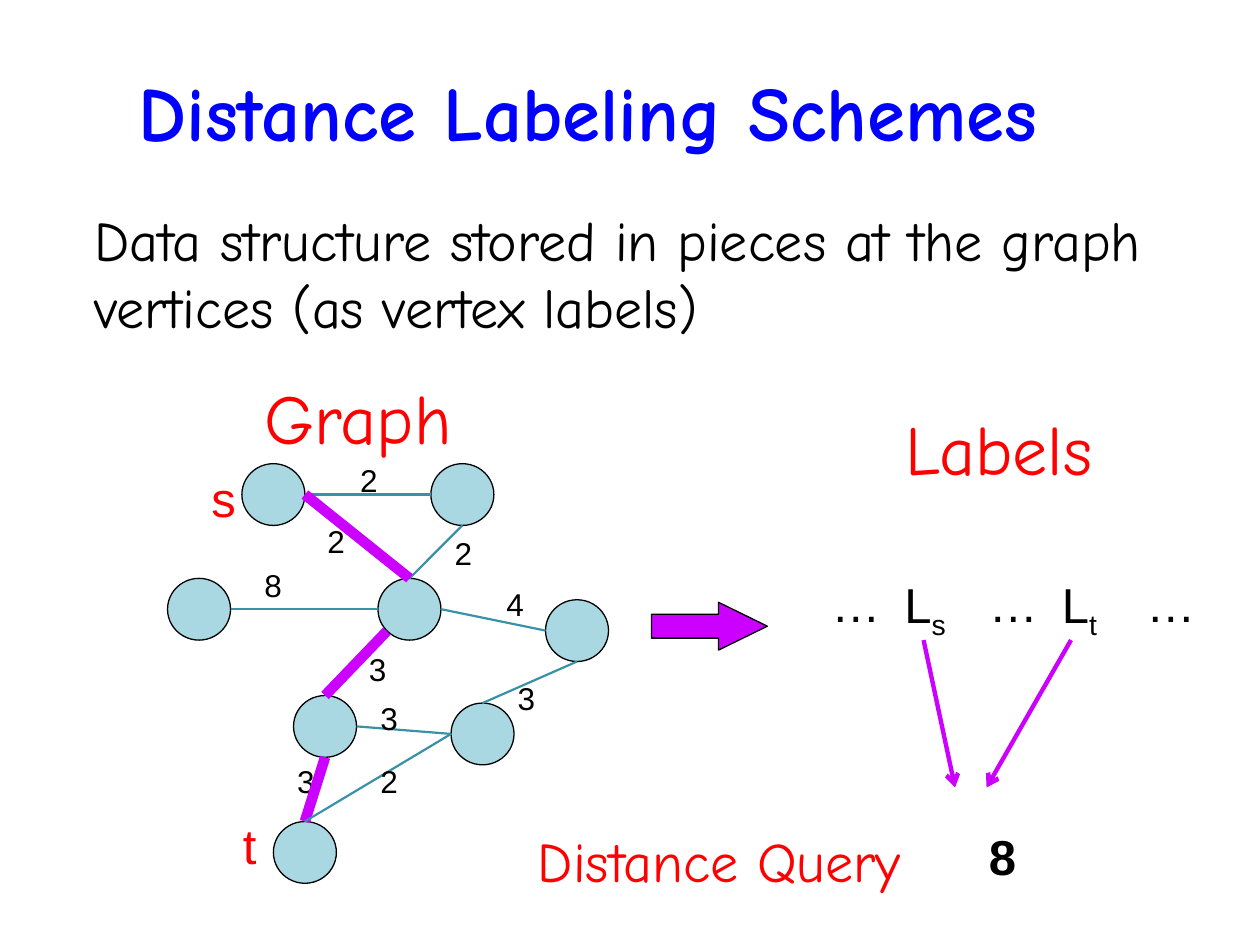
"""Build a slide on distance labeling schemes with a weighted graph."""
from lxml import etree
from pptx import Presentation
from pptx import util as u
from pptx.dml.color import RGBColor
from pptx.enum import shapes, text
from pptx.oxml.ns import qn

BLACK = RGBColor(0x00, 0x00, 0x00)
BLUE = RGBColor(0x00, 0x00, 0xFF)
RED = RGBColor(0xFF, 0x00, 0x00)
PALE = RGBColor(0xA9, 0xD7, 0xE2)
TEAL = RGBColor(0x38, 0x91, 0xA7)
PURPLE = RGBColor(0xCC, 0x00, 0xFF)
COMIC, ARIAL = "Comic Neue", "Arial"

WIDE, HIGH = 0.5, 0.49
NODES = {
    "left": (1.33, 4.59), "hub": (3, 4.59), "low": (2.33, 5.52),
    "mid": (3.58, 5.58), "top": (3.42, 3.68), "right": (4.33, 4.76),
    "s": (1.92, 3.68), "t": (2.17, 6.52),
}
SITES = {
    "N": (WIDE / 2, 0), "S": (WIDE / 2, HIGH), "W": (0, HIGH / 2),
    "E": (WIDE, HIGH / 2), "SW": (0.07, 0.42),
}
PATH = [("s", "E", "hub", "N"), ("hub", "SW", "low", "N"), ("low", "S", "t", "N")]
EDGES = PATH + [
    ("low", "E", "mid", "W"), ("mid", "N", "right", "S"),
    ("right", "W", "hub", "E"), ("hub", "W", "left", "E"),
    ("hub", "N", "top", "S"), ("top", "W", "s", "E"),
]
LAST = ("mid", "W", "t", "N")
COSTS = [
    ("2", 2.76, 3.61), ("2", 2.5, 4.09), ("2", 3.51, 4.19), ("3", 2.26, 6),
    ("3", 2.83, 5.11), ("4", 3.92, 4.59), ("3", 4.01, 5.34), ("8", 2, 4.44),
]
LATE = [("2", 2.92, 6), ("3", 2.92, 5.5)]


class Deck:
    """Holds the style and the current slide."""

    def __init__(self):
        self.prs = Presentation()
        self.prs.slide_width, self.prs.slide_height = u.Inches(10), u.Inches(7.5)
        self.slide = self.prs.slides.add_slide(self.prs.slide_layouts[6])

    def text(self, words, box, size, font=ARIAL, color=BLACK, bold=False, sub="", indent=0):
        frame = self.slide.shapes.add_textbox(*map(u.Inches, box)).text_frame
        frame.word_wrap = True
        para = frame.paragraphs[0]
        para.add_run().text = words
        if sub:
            run = para.add_run()
            run.text = sub
            run._r.get_or_add_rPr().set("baseline", "-25000")
        if indent:
            para._p.get_or_add_pPr().set("marL", str(u.Inches(indent)))
        para.font.size, para.font.name = u.Pt(size), font
        para.font.bold, para.font.color.rgb = bold, color
        return frame

    def shape(self, kind, box, fill):
        item = self.slide.shapes.add_shape(kind, *map(u.Inches, box))
        item.shadow.inherit = False
        item.fill.solid()
        item.fill.fore_color.rgb = fill
        item.line.color.rgb, item.line.width = BLACK, u.Pt(0.75)
        return item

    def line(self, start, end, color, width, arrow=False):
        item = self.slide.shapes.add_connector(
            shapes.MSO_CONNECTOR.STRAIGHT, *map(u.Inches, start + end))
        item.line.color.rgb, item.line.width = color, u.Pt(width)
        if arrow:
            etree.SubElement(item.line._get_or_add_ln(), qn("a:tailEnd"), type="arrow")
        etree.SubElement(item._element.spPr, qn("a:effectLst"))

    def edge(self, link, color=TEAL, width=1.25):
        ends = [tuple(a + b for a, b in zip(NODES[node], SITES[site]))
                for node, site in (link[:2], link[2:])]
        self.line(*ends, color, width)

    def costs(self, items):
        for cost, x, y in items:
            self.text(cost, (x, y, 0.49, 0.4), 18)


def main():
    deck = Deck()
    title = deck.text("Distance Labeling Schemes", (1, 0.17, 9.83, 1.42), 44, COMIC, BLUE, True)
    title.vertical_anchor = text.MSO_ANCHOR.MIDDLE
    deck.text("Data structure stored in pieces at the graph vertices (as vertex labels)",
              (0.25, 1.58, 9.5, 1.72), 32, COMIC, indent=0.4)

    for spot in NODES.values():
        deck.shape(shapes.MSO_SHAPE.OVAL, spot + (WIDE, HIGH), PALE)
    deck.text("t", (1.83, 6.42, 0.49, 0.57), 28, color=RED)
    deck.text("s", (1.58, 3.67, 0.49, 0.57), 28, color=RED)
    for link in EDGES:
        deck.edge(link)
    deck.costs(COSTS)
    deck.text("Graph", (2, 2.92, 2.08, 0.77), 40, COMIC, RED)

    arrow = deck.shape(shapes.MSO_SHAPE.RIGHT_ARROW, (5.17, 4.78, 0.92, 0.38), PURPLE)
    arrow.adjustments[0], arrow.adjustments[1] = 0.5, 1.02
    for sub, x in (("s", 7.08), ("t", 8.33)):
        deck.text("L", (x, 4.51, 0.67, 0.57), 28, sub=sub)
    for i in range(3):
        deck.text("…", (6.5 + 1.25 * i, 4.5, 0.67, 0.57), 28)
    deck.text("Labels", (7.09, 3.17, 2.08, 0.77), 40, COMIC, RED)

    for x, end in ((7.33, 7.58), (8.5, 7.83)):
        deck.line((x, 5.08), (end, 6.25), PURPLE, 2.5, arrow=True)
    deck.text("Distance Query", (4.17, 6.51, 4.33, 0.64), 32, COMIC, RED)
    deck.text("8", (7.75, 6.51, 0.91, 0.57), 28, bold=True)

    for link in PATH:
        deck.edge(link, PURPLE, 6)
    deck.edge(LAST)
    deck.costs(LATE)
    deck.prs.save("out.pptx")


if __name__ == "__main__":
    main()
